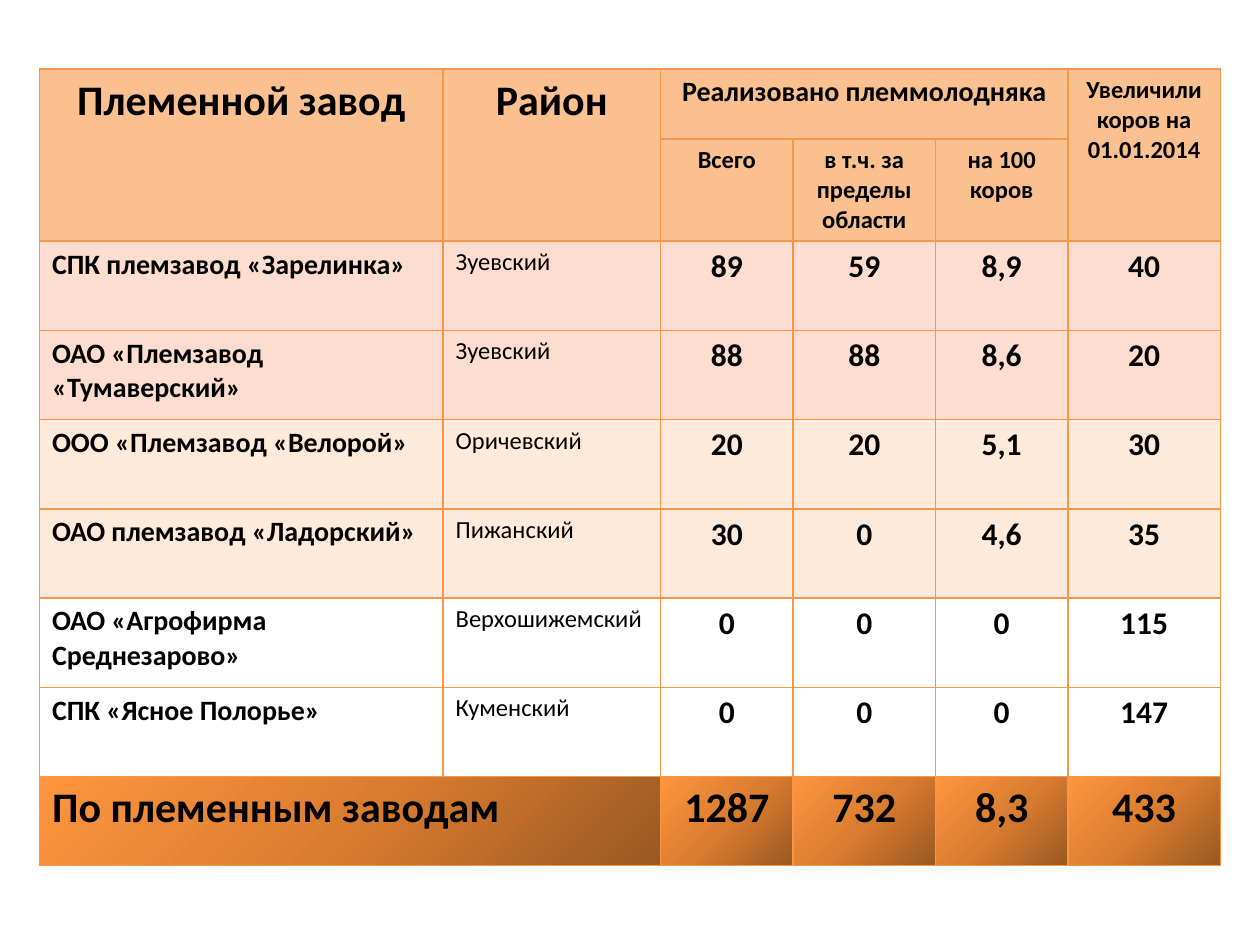
from lxml import etree
from pptx import Presentation
from pptx.dml.color import RGBColor
from pptx.enum import text
from pptx.oxml import parse_xml
from pptx.oxml.ns import nsdecls
from pptx.util import Pt

HEADER, PINK, CREAM, WHITE = "FAC090", "FCDDCF", "FDEADA", "FFFFFF"
BORDER, BLACK = "F79646", "000000"
TOTAL_STOPS = [(0, "9A5822"), (50, "DB7D30"), (100, "FF953E")]
LEFT, CENTER = text.PP_ALIGN.LEFT, text.PP_ALIGN.CENTER


def rgb(value):
    return RGBColor.from_string(value)


def write(cell, content, size, align=CENTER, bold=True):
    p = cell.text_frame.paragraphs[0]
    p.alignment = align
    r = p.add_run()
    r.text = content
    formats = {"name": "Calibri", "size": Pt(size), "bold": bold}
    for name, value in formats.items():
        setattr(r.font, name, value)
    r.font.color.rgb = rgb(BLACK)


prs = Presentation()
prs.slide_width, prs.slide_height = Pt(720), Pt(540)
s = prs.slides.add_slide(prs.slide_layouts[6])

# Table grid
widths = [230.6, 124.3, 75.7, 81.4, 75.7, 87.1]
heights = [40, 50] + [51] * 7
table = s.shapes.add_table(len(heights), len(widths), Pt(22.6), Pt(39.4),
                           Pt(sum(widths)), Pt(sum(heights))).table
for column, width in zip(table.columns, widths):
    column.width = Pt(width)
for row, height in zip(table.rows, heights):
    row.height = Pt(height)

# Borders and fills
fills = [HEADER] * 2 + [PINK] * 2 + [CREAM] * 2 + [WHITE] * 2 + [None]
stops = "".join(f'<a:gs pos="{pos * 1000}"><a:srgbClr val="{color}"/></a:gs>'
                for pos, color in TOTAL_STOPS)
gradient = (f'<a:gradFill {nsdecls("a")} rotWithShape="1"><a:gsLst>{stops}</a:gsLst>'
            f'<a:lin ang="{225 * 60000}" scaled="0"/></a:gradFill>')
for row, color in zip(table.rows, fills):
    for cell in row.cells:
        tcPr = cell._tc.get_or_add_tcPr()
        for side in "LRTB":
            tcPr.append(parse_xml(
                f'<a:ln{side} {nsdecls("a")} w="{Pt(1)}"><a:solidFill>'
                f'<a:srgbClr val="{BORDER}"/></a:solidFill></a:ln{side}>'))
        if color:
            cell.fill.solid()
            cell.fill.fore_color.rgb = rgb(color)
        else:
            tcPr.append(parse_xml(gradient))

# Merged cells: first and last corner
for first, last in [((0, 0), (1, 0)), ((0, 1), (1, 1)), ((0, 2), (0, 4)),
                    ((0, 5), (1, 5)), ((8, 0), (8, 1))]:
    table.cell(*first).merge(table.cell(*last))

# Header
for i, j, content, size in [
    (0, 0, "Племенной завод", 24),
    (0, 1, "Район", 24),
    (0, 2, "Реализовано племмолодняка", 16),
    (0, 5, "Увеличили коров на 01.01.2014", 14),
    (1, 2, "Всего", 14),
    (1, 3, "в т.ч. за пределы области", 14),
    (1, 4, "на 100 коров", 14),
]:
    write(table.cell(i, j), content, size)

# Farms
farms = [
    ("СПК племзавод «Зарелинка»", "Зуевский", "89", "59", "8,9", "40"),
    ("ОАО «Племзавод «Тумаверский»", "Зуевский", "88", "88", "8,6", "20"),
    ("ООО «Племзавод «Велорой»", "Оричевский", "20", "20", "5,1", "30"),
    ("ОАО племзавод «Ладорский»", "Пижанский", "30", "0", "4,6", "35"),
    ("ОАО «Агрофирма Среднезарово»", "Верхошижемский", "0", "0", "0", "115"),
    ("СПК «Ясное Полорье»", "Куменский", "0", "0", "0", "147"),
]
for i, (farm, district, *values) in enumerate(farms, start=2):
    write(table.cell(i, 0), farm, 16, LEFT)
    write(table.cell(i, 1), district, 14, LEFT, bold=False)
    for j, value in enumerate(values, start=2):
        write(table.cell(i, j), value, 18)

# Totals
write(table.cell(8, 0), "По племенным заводам", 24, LEFT)
for j, value in enumerate(["1287", "732", "8,3", "433"], start=2):
    write(table.cell(8, j), value, 24)

prs.save("out.pptx")
